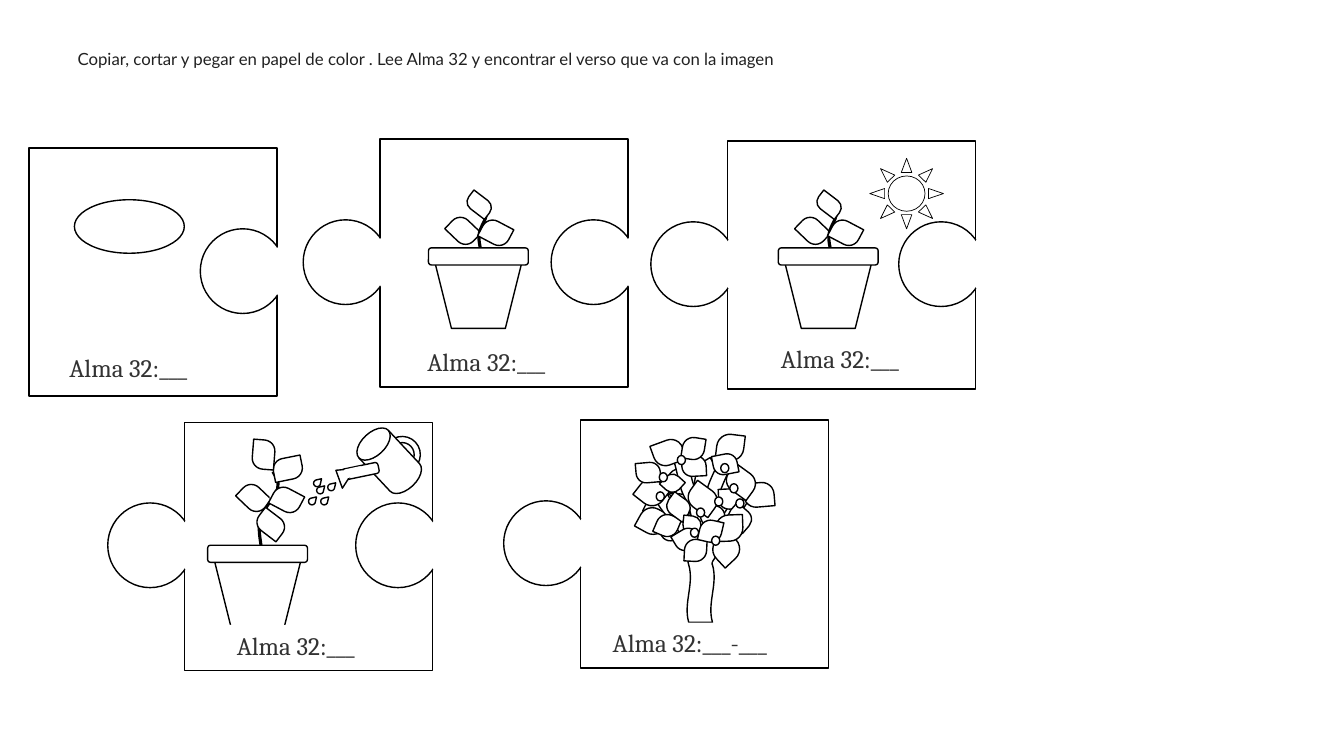
import math

from pptx import Presentation
from pptx.dml.color import RGBColor
from pptx.enum import shapes, text
from pptx.util import Pt

WHITE = RGBColor(0xFF, 0xFF, 0xFF)
BLACK = RGBColor(0, 0, 0)
LABEL_GRAY = RGBColor(0x33, 0x33, 0x33)
TITLE_GRAY = RGBColor(0x21, 0x21, 0x21)
KIND = shapes.MSO_SHAPE

presentation = Presentation()
presentation.slide_width = Pt(960)
presentation.slide_height = Pt(540)
slide = presentation.slides.add_slide(presentation.slide_layouts[5])


def add_drawing(kind, center, size, rotation=0, adjustments=(), line=BLACK, weight=1):
    (x, y), (width, height) = center, size
    shape = slide.shapes.add_shape(kind, Pt(x - width / 2), Pt(y - height / 2), Pt(width), Pt(height))
    shape.rotation = rotation
    for index, value in enumerate(adjustments):
        shape.adjustments[index] = value
    shape.shadow.inherit = False
    shape.fill.solid()
    shape.fill.fore_color.rgb = WHITE
    if line is None:
        shape.line.fill.background()
    else:
        shape.line.color.rgb = line
        shape.line.width = Pt(weight)


def add_leaf(center, size, rotation):
    add_drawing(KIND.ROUND_2_DIAG_RECTANGLE, center, size, rotation, (0.5, 0))


title = slide.shapes.title
title.left, title.top, title.width, title.height = Pt(55.4), Pt(34.8), Pt(622.8), Pt(14.4)
title.fill.solid()
title.fill.fore_color.rgb = WHITE
frame = title.text_frame
frame.text = "Copiar, cortar y pegar en papel de color . Lee Alma 32 y encontrar el verso que va con la imagen"
frame.margin_left = frame.margin_right = frame.margin_top = frame.margin_bottom = 0
frame.auto_size = text.MSO_AUTO_SIZE.NONE
frame.word_wrap = True
frame.vertical_anchor = text.MSO_ANCHOR.MIDDLE
paragraph = frame.paragraphs[0]
paragraph.alignment = text.PP_ALIGN.LEFT
font = paragraph.runs[0].font
font.name, font.size, font.color.rgb = "Lato", Pt(12), TITLE_GRAY

# Puzzle pieces: a black knob inside or outside each joint edge, a white disc opens the edge
PIECE_SIDE = 177.1
HALF_SIDE = PIECE_SIDE / 2
KNOB = (60.5, 60.5)
KNOB_INSET = 24.6
OPENING_OFFSET = 26
KNOB_RISE = 0.7
piece_centers = {
    "seed": (109.4, 194.4),
    "sprout": (360, 188),
    "sunlight": (608.3, 189.4),
    "watering": (220.4, 390.2),
    "tree": (503.2, 388.7),
}
for name, (x, y) in piece_centers.items():
    add_drawing(KIND.RECTANGLE, (x, y), (PIECE_SIDE, PIECE_SIDE))
    joint_edges = []
    if name != "seed":
        joint_edges.append(x - HALF_SIDE)
    if name != "tree":
        joint_edges.append(x + HALF_SIDE)
    for edge in joint_edges:
        add_drawing(KIND.OVAL, (edge - KNOB_INSET, y - KNOB_RISE), KNOB)
        add_drawing(KIND.OVAL, (edge + OPENING_OFFSET, y - KNOB_RISE), KNOB, line=WHITE)

# Seed and sun
seed_x, seed_y = piece_centers["seed"]
add_drawing(KIND.OVAL, (seed_x - 17, seed_y - 32.6), (78.5, 38.2))
sun_x, sun_y = piece_centers["sunlight"]
add_drawing(KIND.SUN, (sun_x + 39.3, sun_y - 51.1), (52.6, 50.4), weight=0.5)

# Watering can and drops, as offsets from the piece center
can_x, can_y = piece_centers["watering"]
CAN_TILT, SPOUT_TILT = 316.9, 258.2
can_parts = {
    "handle": (KIND.DONUT, 66.9, -65.5, (25.9, 25.9), CAN_TILT, (0.169,), BLACK),
    "body": (KIND.FLOWCHART_MAGNETIC_DISK, 57.6, -61.1, (28.8, 49), CAN_TILT, (), BLACK),
    "spout": (KIND.ROUNDED_RECTANGLE, 37, -53.6, (7.9, 26.6), SPOUT_TILT, (0.258,), BLACK),
    "rose": (KIND.ISOSCELES_TRIANGLE, 24.1, -51.4, (16.6, 10.8), 302.6, (), BLACK),
    "joint": (KIND.ROUNDED_RECTANGLE, 32, -52.9, (6.5, 13.7), SPOUT_TILT, (0.258,), None),
}
for kind, dx, dy, size, tilt, adjustments, line in can_parts.values():
    add_drawing(kind, (can_x + dx, can_y + dy), size, tilt, adjustments, line)
for dx, dy in [(8.3, -39.9), (16.2, -42.1), (6.1, -45), (2.5, -32), (11.2, -32)]:
    add_drawing(KIND.TEAR, (can_x + dx, can_y + dy), (5, 5), adjustments=(1.286,))

# Potted plants: everything hangs on the center of the pot rim
PAIR_LEAF = (20.9, 15.8)
PAIR_REACH = 11.7
STEM_STEPS = 16
sprout = {
    "pair": (0.7, -17.6), "stem_base": (2.7, 3.3), "height": 40.3, "lean": 0.5, "sway": 2.5,
    "extra_leaves": [(0.6, -37, (12.2, 18.7), 307.3)],
}
seedling = {
    "pair": (9, -39.2), "stem_base": (3, 5.4), "height": 64, "lean": 8, "sway": 5,
    "extra_leaves": [(9.4, -20.9, (15.1, 20.9), 307.3), (21.6, -60.8, PAIR_LEAF, 348.6),
                     (4.3, -70.9, PAIR_LEAF, 274.6)],
}
for name, plant, rim_dx, rim_dy in [("sprout", sprout, -18.3, -4.8), ("sunlight", sprout, -16.7, -6.2),
                                    ("watering", seedling, -36.4, 5.4)]:
    rim_x, rim_y = piece_centers[name][0] + rim_dx, piece_centers[name][1] + rim_dy
    pair_x, pair_y = rim_x + plant["pair"][0], rim_y + plant["pair"][1]
    add_leaf((pair_x - PAIR_REACH, pair_y - 0.7), PAIR_LEAF, 43.7)

    base_x, base_y = rim_x + plant["stem_base"][0], rim_y + plant["stem_base"][1]
    stem_points = []
    for step in range(STEM_STEPS + 1):
        rise = step / STEM_STEPS
        bend = plant["lean"] * rise - plant["sway"] * math.sin(2 * math.pi * rise ** 1.6)
        stem_points.append((Pt(base_x + bend), Pt(base_y - plant["height"] * rise)))
    builder = slide.shapes.build_freeform(*stem_points[0])
    builder.add_line_segments(stem_points[1:], close=False)
    stem = builder.convert_to_shape()
    stem.shadow.inherit = False
    stem.fill.solid()
    stem.fill.fore_color.rgb = WHITE
    stem.line.color.rgb = BLACK
    stem.line.width = Pt(2.25)

    add_leaf((pair_x + PAIR_REACH, pair_y + 0.7), PAIR_LEAF, 27.8)
    add_drawing(KIND.TRAPEZOID, (rim_x, rim_y + 23.7), (66.2, 55.4), 180)
    add_drawing(KIND.ROUNDED_RECTANGLE, (rim_x, rim_y), (71.3, 12.2))
    for dx, dy, size, rotation in plant["extra_leaves"]:
        add_leaf((rim_x + dx, rim_y + dy), size, rotation)

# Tree: layers from back to front, as offsets from the center of the crown
crown_x, crown_y = piece_centers["tree"][0] + 0.8, piece_centers["tree"][1] - 36.7
BROAD, LONG, MEDIUM, ROUND, BUD = (19.4, 18.7), (17.3, 21.6), (14.4, 17.3), (15.8, 15.8), (13, 13)
TRUNK, BRANCH, BERRY = (82.1, 19.4), (68.4, 10.8), (5.8, 6.5)
back_leaves = [
    (LONG, 13, -1.4, 85), (BROAD, -0.4, -12.2, 330), (BROAD, -17.7, -7.9, 10), (ROUND, -18.7, 8.7, 15),
    (BROAD, -32.1, 8.7, 26), (BROAD, -37.8, 20.2, 29), (MEDIUM, -23.8, 26.7, 72),
]
wood = [
    (TRUNK, -3.5, 51.5, 270), (BRANCH, -23.4, 14.1, 235), (BRANCH, 13.3, 25.6, 299),
    (BRANCH, 4.7, 3.3, 289), (BRANCH, -10.4, 1.9, 252),
]
middle_leaves = [
    (BROAD, -38.5, -0.3, 38), (BROAD, 17.6, -32.4, 187), (LONG, -26.7, -28.7, 70), (BUD, -23.7, -6.8, 42),
    (MEDIUM, -41, -14.4, 85), (MEDIUM, -8.3, -19, 87), (ROUND, -27.4, 23.4, 23), (MEDIUM, -19.4, 10.1, 126),
    (MEDIUM, 5, 16.6, 87), (LONG, -2.1, 4.4, 126), (ROUND, -8.7, -31.6, 9), (MEDIUM, 18, 4.4, 87),
    (LONG, 38.1, 1.5, 85), (LONG, 25.2, -7.8, 126), (MEDIUM, 14, -20.4, 79), (MEDIUM, 24.5, 18, 131),
]
middle_berries = [(-32.4, 2.6), (24.5, 7.6), (20.2, -3.2), (-30.2, -11.1),
                  (-17.3, -23.4), (13.7, -17.6), (-3.6, 14.1), (9.4, 6.2)]
low_leaves = [(BUD, -9.7, 23.1, 276), (MEDIUM, -13.7, 33.2, 239)]
front_leaves = [(BROAD, 14.7, 40.3, 137), (BROAD, 16.9, 25.2, 178), (ROUND, -7.2, 41.1, 183), (ROUND, 3.6, 27.4, 193)]

for size, dx, dy, rotation in back_leaves:
    add_leaf((crown_x + dx, crown_y + dy), size, rotation)
for size, dx, dy, rotation in wood:
    add_drawing(KIND.DOUBLE_WAVE, (crown_x + dx, crown_y + dy), size, rotation)
add_drawing(KIND.OVAL, (crown_x - 2.6, crown_y + 47.9), (13.7, 48.2), line=None)
for leaves, berries in [(middle_leaves, middle_berries), (low_leaves, [(-7.9, 28.5)]), (front_leaves, [(7.2, 34.2)])]:
    for size, dx, dy, rotation in leaves:
        add_leaf((crown_x + dx, crown_y + dy), size, rotation)
    for dx, dy in berries:
        add_drawing(KIND.OVAL, (crown_x + dx, crown_y + dy), BERRY)

# Verse labels, as offsets from the top left corner of each piece
VERSE, VERSE_RANGE = ("Alma 32:___", 116.6), ("Alma 32:___-___", 152.6)
labels = {
    "seed": (VERSE, 21.6, 142.6),
    "sprout": (VERSE, 26.7, 144.7),
    "sunlight": (VERSE, 31, 141.1),
    "watering": (VERSE, 30.2, 144.7),
    "tree": (VERSE_RANGE, 15.9, 144.7),
}
for name, ((wording, width), dx, dy) in labels.items():
    x, y = piece_centers[name]
    label = slide.shapes.add_textbox(Pt(x - HALF_SIDE + dx), Pt(y - HALF_SIDE + dy), Pt(width), Pt(28.8))
    label.fill.solid()
    label.fill.fore_color.rgb = WHITE
    label.text_frame.text = wording
    label.text_frame.word_wrap = False
    label.text_frame.auto_size = text.MSO_AUTO_SIZE.SHAPE_TO_FIT_TEXT
    font = label.text_frame.paragraphs[0].runs[0].font
    font.name, font.size, font.color.rgb = "Cambria", Pt(18), LABEL_GRAY

presentation.save("out.pptx")
